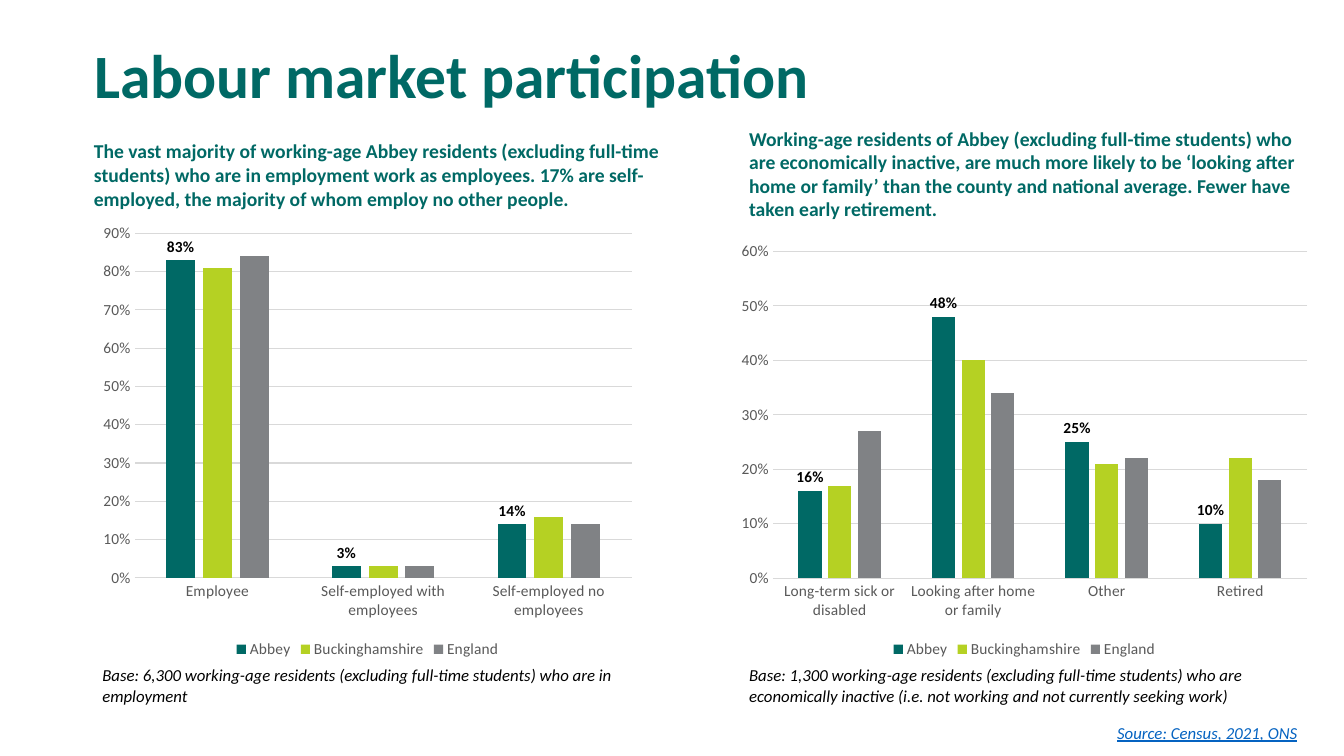
from lxml.etree import SubElement
from pptx import Presentation
from pptx.chart.data import CategoryChartData
from pptx.dml.color import RGBColor
from pptx.enum.chart import XL_CHART_TYPE as ChartType, XL_LABEL_POSITION as LabelPosition
from pptx.enum.chart import XL_LEGEND_POSITION as LegendPosition, XL_TICK_MARK as TickMark
from pptx.enum.text import MSO_ANCHOR as Anchor
from pptx.oxml.ns import qn
from pptx.util import Inches, Pt

WIDTH, HEIGHT = Inches(13.33), Inches(7.5)
COLUMNS, ROWS = 160, 90
FONT = "Calibri"
TEAL, LIME, GREY = "006965", "B5D123", "808285"
BLACK, AXIS_TEXT, GRID, LINK = "000000", "595959", "D9D9D9", "0563C1"
AREAS = {"Abbey": TEAL, "Buckinghamshire": LIME, "England": GREY}


def colour(hex_code):
    return RGBColor.from_string(hex_code)


def place(column, row, columns, rows):
    across, down = WIDTH / COLUMNS, HEIGHT / ROWS
    return [round(n) for n in (column * across, row * down, columns * across, rows * down)]


def style(font, size, hex_code, bold=False, italic=False, underline=False):
    font.name, font.size = FONT, Pt(size)
    font.bold, font.italic, font.underline = bold, italic, underline
    font.color.rgb = colour(hex_code)


def add_title(page, text):
    title = page.shapes.title
    title.left, title.top, title.width, title.height = place(10, 0.6, 138, 17.4)
    title.text_frame.text = text
    title.text_frame.vertical_anchor = Anchor.MIDDLE
    para = title.text_frame.paragraphs[0]
    para.line_spacing = 0.9
    style(para.runs[0].font, 44, TEAL, bold=True)


def add_text(page, area, text, size, hex_code, **looks):
    box = page.shapes.add_textbox(*place(*area))
    box.text_frame.word_wrap = True
    box.text_frame.text = text
    style(box.text_frame.paragraphs[0].runs[0].font, size, hex_code, **looks)


def add_heading(page, area, text):
    add_text(page, area, text, 14, TEAL, bold=True)


def add_base(page, column, text):
    add_text(page, (column, 78.6, 70, 6), text, 12, BLACK, italic=True)


def style_axes(chart, top):
    for axis in (chart.category_axis, chart.value_axis):
        axis.major_tick_mark = axis.minor_tick_mark = TickMark.NONE
        style(axis.tick_labels.font, 11, AXIS_TEXT)
    values = chart.value_axis
    values.minimum_scale, values.maximum_scale, values.major_unit = 0, top, 0.1
    values.tick_labels.number_format = "0%"
    values.tick_labels.number_format_is_linked = False
    values.format.line.fill.background()
    for line in (values.major_gridlines.format.line, chart.category_axis.format.line):
        line.color.rgb = colour(GRID)
        line.width = Pt(0.75)


def add_labels(series):
    labels = series.data_labels
    labels.show_value = True
    labels.number_format, labels.number_format_is_linked = "0%", False
    labels.position = LabelPosition.OUTSIDE_END
    style(labels.font, 11, BLACK, bold=True)


def add_columns(page, area, top, shares):
    data = CategoryChartData(number_format="0%")
    data.categories = list(shares)
    for name, values in zip(AREAS, zip(*shares.values())):
        data.add_series(name, values)
    chart = page.shapes.add_chart(ChartType.COLUMN_CLUSTERED, *place(*area), data).chart
    style(chart.font, 11, BLACK)
    chart.has_title = False
    chart.has_legend = True
    chart.legend.position = LegendPosition.BOTTOM
    chart.legend.include_in_layout = False
    style(chart.legend.font, 11, AXIS_TEXT)
    style_axes(chart, top)
    plot = chart.plots[0]
    plot.gap_width, plot.overlap, plot.vary_by_categories = 219, -27, False
    for series, hex_code in zip(plot.series, AREAS.values()):
        series.format.fill.solid()
        series.format.fill.fore_color.rgb = colour(hex_code)
        series.invert_if_negative = False
    add_labels(plot.series[0])


def main():
    deck = Presentation()
    deck.slide_width, deck.slide_height = WIDTH, HEIGHT
    page = deck.slides.add_slide(deck.slide_layouts.get_by_name("Title Only"))
    add_title(page, "Labour market participation")
    add_heading(page, (10, 16, 74.4, 9.7),
                "The vast majority of working-age Abbey residents (excluding full-time students) "
                "who are in employment work as employees. 17% are self-employed, the majority of "
                "whom employ no other people.")
    add_heading(page, (88, 14.5, 69.8, 12.5),
                "Working-age residents of Abbey (excluding full-time students) who are "
                "economically inactive, are much more likely to be ‘looking after home or family’ "
                "than the county and national average. Fewer have taken early retirement.")
    add_columns(page, (11, 25.6, 65.5, 53.3), 0.9, {
        "Employee": (0.83, 0.81, 0.84),
        "Self-employed with employees": (0.03, 0.03, 0.03),
        "Self-employed no employees": (0.14, 0.16, 0.14),
    })
    add_columns(page, (86.9, 27.8, 70.1, 51.1), 0.6, {
        "Long-term sick or disabled": (0.16, 0.17, 0.27),
        "Looking after home or family": (0.48, 0.4, 0.34),
        "Other": (0.25, 0.21, 0.22),
        "Retired": (0.1, 0.22, 0.18),
    })
    add_base(page, 11, "Base: 6,300 working-age residents (excluding full-time students) who are "
                       "in employment")
    add_base(page, 88, "Base: 1,300 working-age residents (excluding full-time students) who are "
                       "economically inactive (i.e. not working and not currently seeking work)")
    add_text(page, (131.8, 85.4, 25.9, 3.6), "Source: Census, 2021, ONS", 12, LINK,
             italic=True, underline=True)
    para = page.shapes.title.text_frame.paragraphs[0]
    properties = para._p.get_or_add_pPr()
    properties.set("algn", "l")
    deck.save("out.pptx")


if __name__ == "__main__":
    main()
